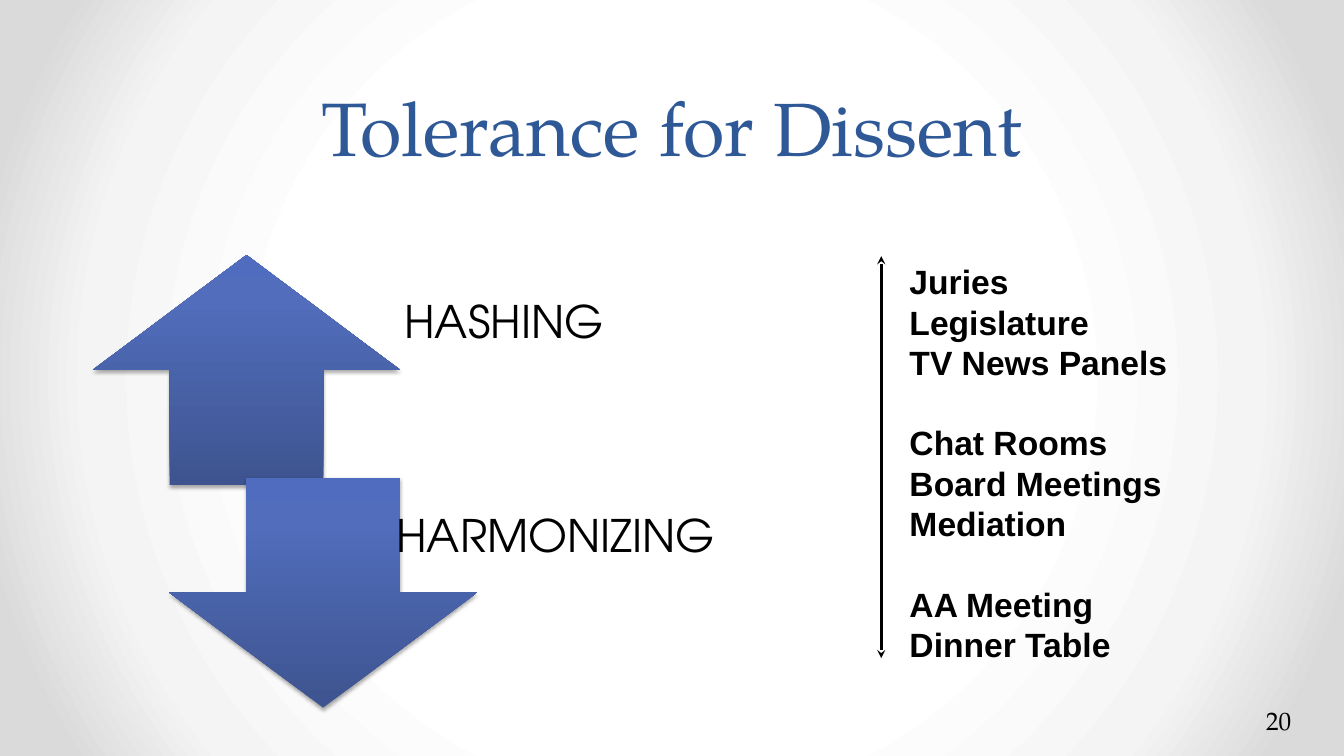
from dataclasses import dataclass

from lxml import etree
from pptx import Presentation
from pptx.dml.color import RGBColor
from pptx.enum.shapes import MSO_CONNECTOR, MSO_SHAPE
from pptx.enum.text import MSO_ANCHOR, MSO_AUTO_SIZE, PP_ALIGN
from pptx.oxml import parse_xml
from pptx.oxml.ns import nsdecls, qn
from pptx.util import Inches, Pt

UP, DOWN = MSO_SHAPE.UP_ARROW, MSO_SHAPE.DOWN_ARROW
STRAIGHT = MSO_CONNECTOR.STRAIGHT
TOP, MIDDLE, BOTTOM = MSO_ANCHOR.TOP, MSO_ANCHOR.MIDDLE, MSO_ANCHOR.BOTTOM
LEFT, CENTER = PP_ALIGN.LEFT, PP_ALIGN.CENTER
NO_FIT, GROW = MSO_AUTO_SIZE.NONE, MSO_AUTO_SIZE.SHAPE_TO_FIT_TEXT

SLIDE_W, SLIDE_H = Inches(13.33), Inches(7.5)
COLORS = {"title": "2F5897", "text": "000000", "arrow_dark": "3E5490",
          "arrow_mid": "516DBB", "arrow_light": "4F6CBE",
          "center": "FFFFFF", "ring": "F4F4F4", "edge": "DADADA"}
SERIF, GEOMETRIC, SANS = "TeX Gyre Pagella", "TeX Gyre Adventor", "Arial"
LIST_LINE = Pt(28.8)

ARROW_STOPS = [(0, "arrow_dark"), (80, "arrow_mid"), (100, "arrow_light")]
PAGE_STOPS = [(50, "center"), (76, "ring"), (92, "edge")]
UPWARD = '<a:lin {} ang="16200000" scaled="0"/>'
RADIAL = ('<a:path {} path="circle">'
          '<a:fillToRect l="50000" t="50000" r="50000" b="50000"/></a:path>')


@dataclass
class Box:
    """Left, top, width and height in percent of the slide."""
    x: float
    y: float
    w: float
    h: float


@dataclass
class Tendency:
    label: str
    shape: int
    arrow_box: Box
    label_box: Box


TENDENCIES = [
    Tendency("HASHING", UP, Box(6.9, 33.73, 22.88, 30.4), Box(28.21, 37.73, 21.6, 13.6)),
    Tendency("HARMONIZING", DOWN, Box(12.6, 63.2, 22.88, 30.4), Box(27.61, 67.6, 31.13, 10.53)),
]
SETTINGS = [
    ["Juries", "Legislature", "TV News Panels"],
    ["Chat Rooms", "Board Meetings", "Mediation"],
    ["AA Meeting", "Dinner Table"],
]


def across(share: float) -> int:
    return round(SLIDE_W * share / 100)


def down(share: float) -> int:
    return round(SLIDE_H * share / 100)


def frame(box: Box) -> tuple[int, int, int, int]:
    return across(box.x), down(box.y), across(box.w), down(box.h)


def place(sp, box: Box) -> None:
    sp.left, sp.top, sp.width, sp.height = frame(box)


def write(tf, groups: list[list[str]], *, font: str, size: float, color: str = "text",
          bold: bool = False, align=LEFT, anchor=TOP, spacing=None, gap=0,
          fit=NO_FIT) -> None:
    tf.word_wrap, tf.auto_size, tf.vertical_anchor = True, fit, anchor
    lines = [(text, g > 0 and i == 0)
             for g, group in enumerate(groups) for i, text in enumerate(group)]
    for n, (text, starts_group) in enumerate(lines):
        p = tf.add_paragraph() if n else tf.paragraphs[0]
        p.alignment, p.line_spacing = align, spacing
        p.space_before, p.space_after = (gap if starts_group else Pt(0)), Pt(0)
        pPr = p._p.get_or_add_pPr()
        pPr.set("marL", "0")
        pPr.set("indent", "0")
        etree.SubElement(pPr, qn("a:buNone"))
        r = p.add_run()
        r.text = text
        r.font.name, r.font.size, r.font.bold = font, Pt(size), bold
        r.font.color.rgb = RGBColor.from_string(COLORS[color])


def set_gradient(fill, root, stops: list[tuple[int, str]], direction: str) -> None:
    fill.gradient()
    grad = root.find(".//" + qn("a:gradFill"))
    for child in list(grad):
        grad.remove(child)
    gs_list = etree.SubElement(grad, qn("a:gsLst"))
    for pos, color in stops:
        gs = etree.SubElement(gs_list, qn("a:gs"), pos=str(pos * 1000))
        etree.SubElement(gs, qn("a:srgbClr"), val=COLORS[color])
    grad.append(parse_xml(direction.format(nsdecls("a"))))


def add_text(s, box: Box, text: str, **style):
    sp = s.shapes.add_textbox(*frame(box))
    write(sp.text_frame, [[text]], **style)
    return sp


def add_tendency(s, item: Tendency) -> None:
    sp = s.shapes.add_shape(item.shape, *frame(item.arrow_box))
    set_gradient(sp.fill, sp._element.spPr, ARROW_STOPS, UPWARD)
    sp.line.fill.background()
    sp.shadow.inherit = False
    effects = sp._element.spPr.find(qn("a:effectLst"))
    shadow = etree.SubElement(effects, qn("a:outerShdw"), blurRad=str(Pt(3.1)),
                              dist=str(Pt(1.8)), dir="5400000", rotWithShape="0")
    tint = etree.SubElement(shadow, qn("a:srgbClr"), val=COLORS["text"])
    etree.SubElement(tint, qn("a:alpha"), val="35000")

    label = add_text(s, item.label_box, item.label, font=GEOMETRIC, size=32,
                     anchor=MIDDLE, spacing=0.9)
    tf = label.text_frame
    tf.margin_left = tf.margin_right = tf.margin_bottom = Inches(0.25)
    tf.margin_top = 0


def add_scale(s, x: float, top: float, bottom: float) -> None:
    line = s.shapes.add_connector(STRAIGHT, across(x), down(top), across(x), down(bottom))
    line.line.width = Pt(2)
    line.line.color.rgb = RGBColor.from_string(COLORS["text"])
    for end in ("a:headEnd", "a:tailEnd"):
        etree.SubElement(line.line._get_or_add_ln(), qn(end), type="stealth")
    etree.SubElement(line._element.spPr, qn("a:effectLst"))


def main() -> None:
    prs = Presentation()
    prs.slide_width, prs.slide_height = SLIDE_W, SLIDE_H
    s = prs.slides.add_slide(prs.slide_layouts[1])
    set_gradient(s.background.fill, s._element.cSld, PAGE_STOPS, RADIAL)

    title, body = s.shapes.title, s.placeholders[1]
    place(title, Box(5, 0, 90, 23.33))
    write(title.text_frame, [["Tolerance for Dissent"]], font=SERIF, size=54,
          color="title", align=CENTER, anchor=BOTTOM, spacing=Pt(58))
    place(body, Box(66.92, 33.87, 23.41, 59.73))
    write(body.text_frame, SETTINGS, font=SANS, size=24, bold=True,
          spacing=LIST_LINE, gap=LIST_LINE, fit=GROW)

    for item in TENDENCIES:
        add_tendency(s, item)
    add_scale(s, 65.57, 33.87, 87.07)
    add_text(s, Box(93.47, 92.67, 6.15, 5.33), "20", font=SERIF, size=18)
    prs.save("out.pptx")


if __name__ == "__main__":
    main()
